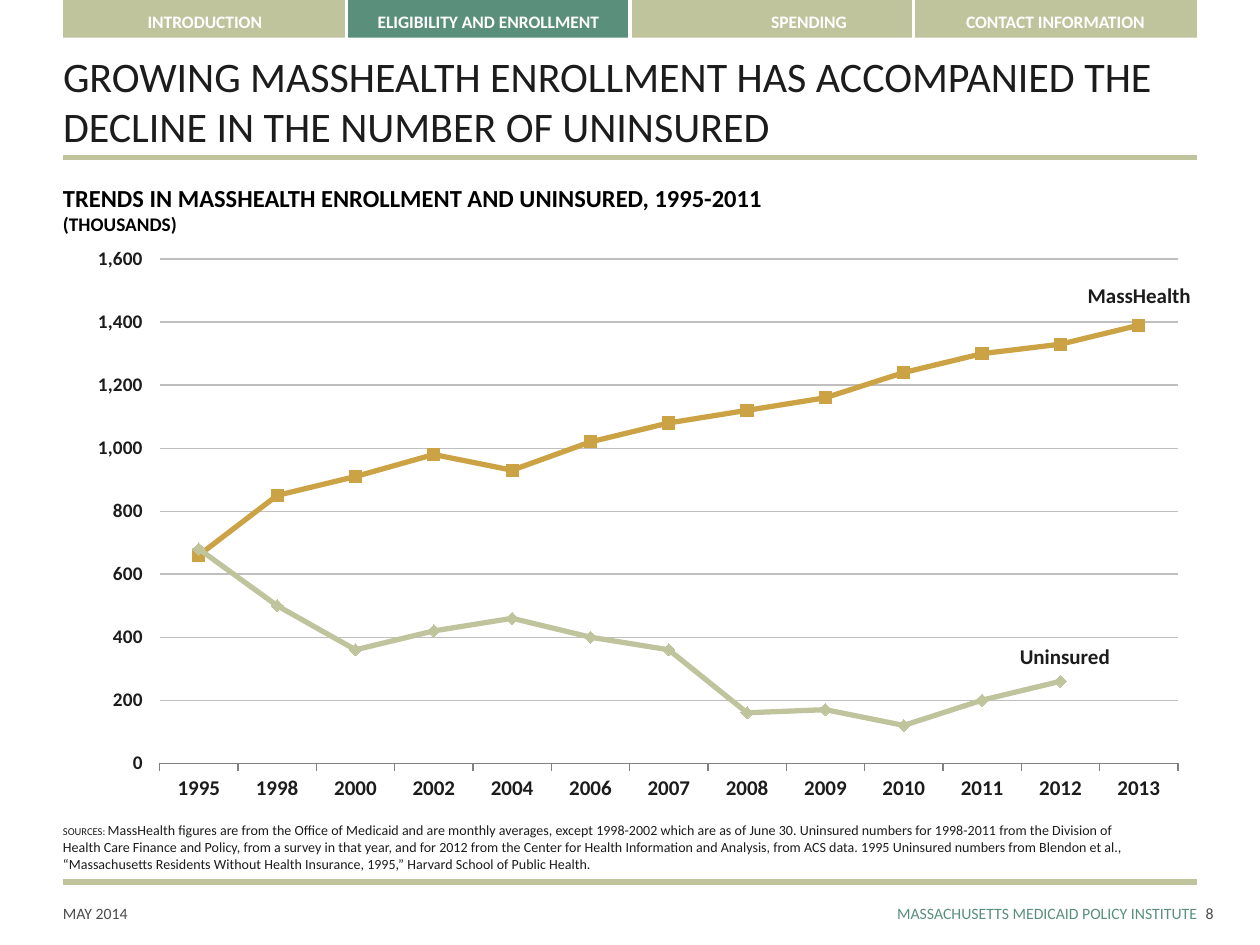
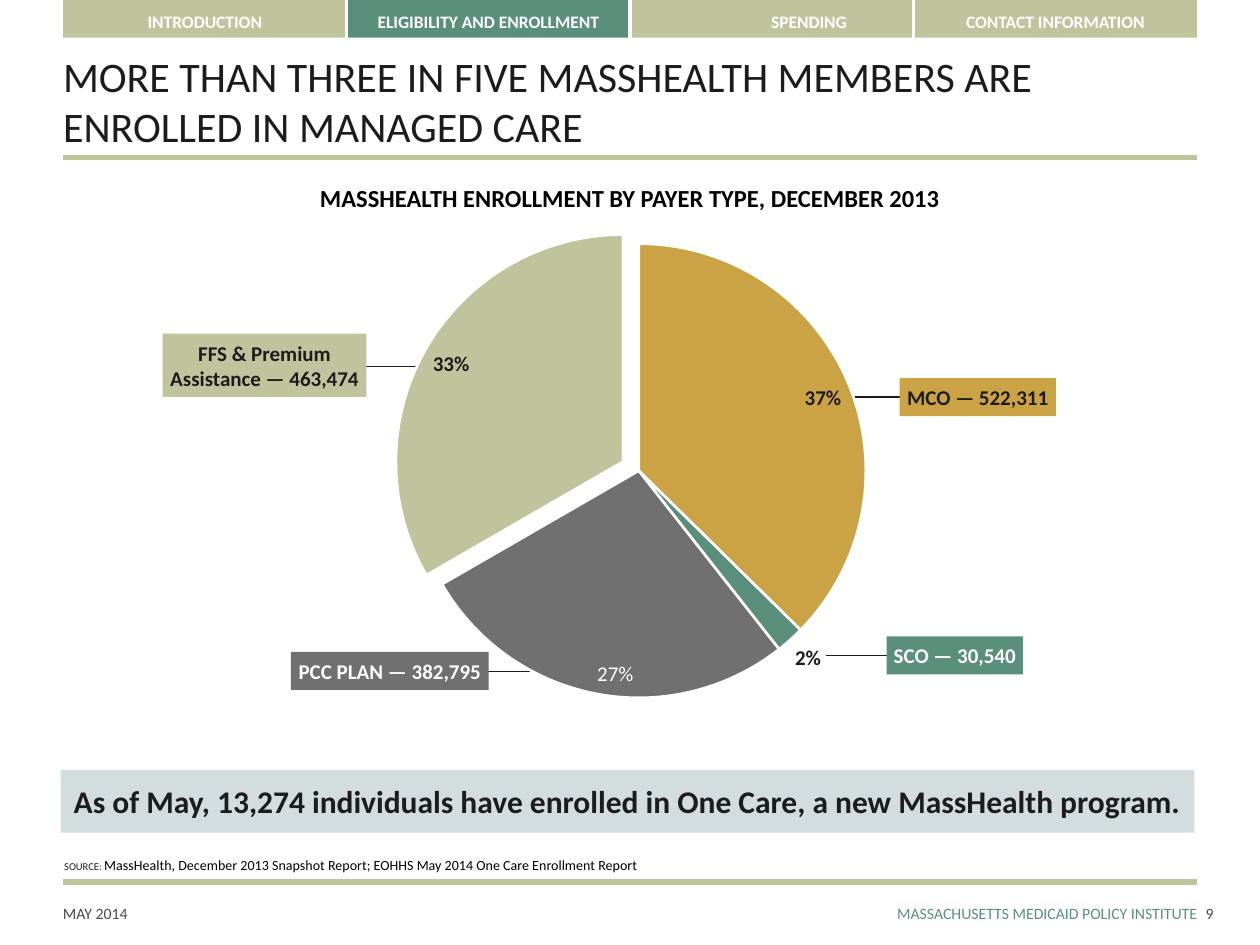
from lxml import etree
from pptx import Presentation
from pptx.chart.data import CategoryChartData
from pptx.dml.color import RGBColor
from pptx.enum.chart import (XL_CHART_TYPE, XL_LABEL_POSITION, XL_MARKER_STYLE,
                             XL_TICK_MARK)
from pptx.enum.shapes import MSO_CONNECTOR, MSO_SHAPE
from pptx.enum.text import MSO_ANCHOR, MSO_AUTO_SIZE, PP_ALIGN
from pptx.oxml.ns import qn
from pptx.util import Pt

LEFT, CENTER, RIGHT = PP_ALIGN.LEFT, PP_ALIGN.CENTER, PP_ALIGN.RIGHT
TOP, MIDDLE, BOTTOM = MSO_ANCHOR.TOP, MSO_ANCHOR.MIDDLE, MSO_ANCHOR.BOTTOM
INSIDE_END, OUTSIDE_END = XL_LABEL_POSITION.INSIDE_END, XL_LABEL_POSITION.OUTSIDE_END
TICK_OUTSIDE = XL_TICK_MARK.OUTSIDE
SQUARE, DIAMOND = XL_MARKER_STYLE.SQUARE, XL_MARKER_STYLE.DIAMOND

FONT = "Calibri"
COLORS = {"ink": "1C1C1C", "black": "000000", "white": "FFFFFF", "footer": "4B4B4B",
          "sage": "BFC49D", "green": "5A8F7C", "gold": "CBA344", "gray": "707070",
          "mist": "D4DDDD", "grid": "BFBFBF", "axis": "808080"}
MARGIN, CONTENT_WIDTH = 36, 648

# Section name and left inset of its label
SECTIONS = [("INTRODUCTION", 3.6), ("ELIGIBILITY AND ENROLLMENT", 3.6),
            ("SPENDING", 46), ("CONTACT INFORMATION", 0)]
CURRENT_SECTION = "ELIGIBILITY AND ENROLLMENT"
ISSUE_DATE = "MAY 2014"
PUBLISHER = "MASSACHUSETTS MEDICAID POLICY INSTITUTE"

TRENDS = {
    "number": 8,
    "title": "GROWING MASSHEALTH ENROLLMENT HAS ACCOMPANIED THE DECLINE IN THE NUMBER OF UNINSURED",
    "heading": [[("TRENDS IN MASSHEALTH ENROLLMENT AND UNINSURED, 1995-2011", {})],
                [("(THOUSANDS)", {"size": 11})]],
    "source": ("SOURCES: ",
               "MassHealth figures are from the Office of Medicaid and are monthly averages, "
               "except 1998-2002 which are as of June 30. Uninsured numbers for 1998-2011 from "
               "the Division of Health Care Finance and Policy, from a survey in that year, and "
               "for 2012 from the Center for Health Information and Analysis, from ACS data. "
               "1995 Uninsured numbers from Blendon et al., “Massachusetts Residents Without "
               "Health Insurance, 1995,” Harvard School of Public Health."),
    "years": ["1995", "1998", "2000", "2002", "2004", "2006", "2007", "2008", "2009",
              "2010", "2011", "2012", "2013"],
    # Name, color, marker, values, place of the name
    "series": [
        ("MassHealth", "gold", SQUARE,
         [660, 850, 910, 980, 930, 1020, 1080, 1120, 1160, 1240, 1300, 1330, 1390],
         (614, 157.7, 74, 21.6)),
        ("Uninsured", "sage", DIAMOND,
         [680, 500, 360, 420, 460, 400, 360, 160, 170, 120, 200, 260, None],
         (575, 364.3, 67, 21.6)),
    ],
}

PAYERS = {
    "number": 9,
    "title": "MORE THAN THREE IN FIVE MASSHEALTH MEMBERS ARE ENROLLED IN MANAGED CARE",
    "heading": "MASSHEALTH ENROLLMENT BY PAYER TYPE, DECEMBER 2013",
    "source": ("SOURCE: ", "MassHealth, December 2013 Snapshot Report; "
                           "EOHHS May 2014 One Care Enrollment Report"),
    "takeaway": "As of May, 13,274 individuals have enrolled in One Care, "
                "a new MassHealth program.",
    # Callout lines, share, fill, text color, callout box, leader (start, end, height)
    "shares": [
        (["MCO — 522,311"], 0.37, "gold", "ink",
         (514.1, 216, 89.3, 21.8), (480, 523, 226.8)),
        (["SCO — 30,540"], 0.02, "green", "white",
         (506.6, 363.6, 78, 21.8), (472, 514, 374.4)),
        (["PCC PLAN — 382,795"], 0.27, "gray", "white",
         (166.3, 372.5, 113, 21.8), (274, 316, 383.6)),
        (["FFS & Premium", "Assistance — 463,474"], 0.33, "sage", "ink",
         (93, 190.6, 116.4, 36.2), (204, 246, 209.4)),
    ],
}


def rgb(name):
    return RGBColor.from_string(COLORS[name])


def style_font(font, size, color="ink", bold=False):
    font.name, font.size, font.bold = FONT, Pt(size), bold
    font.color.rgb = rgb(color)


def write(shape, content, size=12, color="ink", bold=False, align=LEFT, anchor=TOP,
          insets=(0, 0, 0, 0), wrap=True):
    """Fill a shape with a string, or with paragraphs made of (text, format) runs."""
    frame = shape.text_frame
    frame.auto_size, frame.word_wrap = MSO_AUTO_SIZE.NONE, wrap
    frame.vertical_anchor = anchor
    (frame.margin_left, frame.margin_top,
     frame.margin_right, frame.margin_bottom) = map(Pt, insets)
    paragraphs = [[(content, {})]] if isinstance(content, str) else content
    for index, runs in enumerate(paragraphs):
        paragraph = frame.add_paragraph() if index else frame.paragraphs[0]
        paragraph.alignment = align
        for words, changes in runs:
            run = paragraph.add_run()
            run.text = words
            style_font(run.font, **{"size": size, "color": color, "bold": bold, **changes})


def add_text(slide, box, content, **style):
    write(slide.shapes.add_textbox(*map(Pt, box)), content, **style)


def add_box(slide, box, fill, content, **style):
    shape = slide.shapes.add_shape(MSO_SHAPE.RECTANGLE, *map(Pt, box))
    shape.shadow.inherit = False
    shape.fill.solid()
    shape.fill.fore_color.rgb = rgb(fill)
    shape.line.fill.background()
    write(shape, content, **style)


def add_line(slide, x1, y1, x2, y2, color, width):
    line = slide.shapes.add_connector(MSO_CONNECTOR.STRAIGHT, *map(Pt, (x1, y1, x2, y2)))
    line.line.color.rgb = rgb(color)
    line.line.width = Pt(width)
    etree.SubElement(line._element.spPr, qn("a:effectLst"))


def add_page(deck, page, source_box, source_color):
    """Add a slide with section tabs, title, rules, source and footer."""
    slide = deck.slides.add_slide(deck.slide_layouts[5])
    tab_width = CONTENT_WIDTH / len(SECTIONS)
    edges = [MARGIN + i * tab_width for i in range(len(SECTIONS))]
    for x, (section, inset) in zip(edges, SECTIONS):
        add_box(slide, (x, 0, tab_width, 21.6),
                "green" if section == CURRENT_SECTION else "sage", section,
                size=10, color="white", bold=True, align=CENTER, anchor=BOTTOM,
                insets=(inset, 0, min(inset, 3.6), 3.6))
    for x in edges[1:]:
        add_line(slide, x, 0, x, 21.6, "white", 2)
    for y in (90, 504):
        add_line(slide, MARGIN, y, MARGIN + CONTENT_WIDTH, y, "sage", 3)

    title = slide.shapes.title
    title.left, title.top, title.width, title.height = map(
        Pt, (MARGIN, 27.4, CONTENT_WIDTH, 62.6))
    write(title, page["title"], size=24, anchor=BOTTOM, insets=(0, 3.6, 0, 3.6))

    add_text(slide, (MARGIN, 516.2, 130, 23), ISSUE_DATE, size=9, color="footer")
    add_text(slide, (374, 516.2, 310, 23), PUBLISHER, size=9, color="green", align=RIGHT)
    add_text(slide, (689, 516.2, 31, 23), str(page["number"]), size=9, color="footer")
    label, source = page["source"]
    add_text(slide, source_box, [[(label, {"size": 6}), (source, {"color": source_color})]],
             size=8, anchor=BOTTOM, insets=(0, 3.6, 0, 3.6))
    return slide


def add_chart(slide, kind, box, data, plot_area):
    """Add a bare chart whose inner plot area is given as fractions x, y, w, h."""
    chart = slide.shapes.add_chart(kind, *map(Pt, box), data).chart
    chart.has_title = chart.has_legend = False
    style_font(chart.font, 10)
    area = chart._chartSpace.find(".//" + qn("c:plotArea"))
    for layout in area.findall(qn("c:layout")):
        area.remove(layout)
    layout = etree.Element(qn("c:layout"))
    manual = etree.SubElement(layout, qn("c:manualLayout"))
    settings = [("layoutTarget", "inner"), ("xMode", "edge"), ("yMode", "edge"),
                *zip("xywh", plot_area)]
    for tag, value in settings:
        etree.SubElement(manual, qn("c:" + tag)).set("val", str(value))
    area.insert(0, layout)
    return chart


def add_trend_chart(slide):
    data = CategoryChartData(number_format="#,##0")
    data.categories = TRENDS["years"]
    for name, _, _, values, _ in TRENDS["series"]:
        data.add_series(name, values)
    chart = add_chart(slide, XL_CHART_TYPE.LINE_MARKERS, (34.6, 107.3, 650.9, 381.6),
                      data, (0.087, 0.107, 0.894, 0.755))
    for series, (_, color, marker, _, _) in zip(chart.plots[0].series, TRENDS["series"]):
        series.smooth = False
        series.format.line.color.rgb = rgb(color)
        series.format.line.width = Pt(3)
        series.marker.style, series.marker.size = marker, 7
        series.marker.format.fill.solid()
        series.marker.format.fill.fore_color.rgb = rgb(color)
        series.marker.format.line.color.rgb = rgb(color)

    years, counts = chart.category_axis, chart.value_axis
    style_font(years.tick_labels.font, 12, bold=True)
    years.major_tick_mark = counts.major_tick_mark = TICK_OUTSIDE
    years.has_major_gridlines = False
    years.format.line.color.rgb = rgb("axis")
    style_font(counts.tick_labels.font, 11, bold=True)
    counts.tick_labels.number_format = r"#,##0_);[Red]\(#,##0\)"
    counts.tick_labels.number_format_is_linked = False
    counts.minimum_scale, counts.maximum_scale, counts.major_unit = 0, 1600, 200
    counts.format.line.fill.background()
    counts.major_gridlines.format.line.color.rgb = rgb("grid")
    counts.major_gridlines.format.line.width = Pt(0.75)
    axis = counts._element
    if axis.find(qn("c:crossBetween")) is None:
        between = etree.Element(qn("c:crossBetween"))
        between.set("val", "between")
        axis.find(qn("c:crosses")).addnext(between)


def add_share_chart(slide):
    data = CategoryChartData(number_format="0%")
    data.categories = [" ".join(lines) for lines, *_ in PAYERS["shares"]]
    data.add_series("Share of members", [share for _, share, *_ in PAYERS["shares"]])
    chart = add_chart(slide, XL_CHART_TYPE.PIE, (121, 120.2, 478, 306), data,
                      (0.239, 0.062, 0.543, 0.849))
    plot = chart.plots[0]
    plot.vary_by_categories = True
    series = plot.series[0]
    for index, (_, _, fill, *_) in enumerate(PAYERS["shares"]):
        wedge = series.points[index].format
        wedge.fill.solid()
        wedge.fill.fore_color.rgb = rgb(fill)
        wedge.line.color.rgb = rgb("white")
        wedge.line.width = Pt(1.5)

    fee_for_service = series._element.findall(qn("c:dPt"))[3]
    explosion = etree.Element(qn("c:explosion"))
    explosion.set("val", "8")
    fee_for_service.find(qn("c:spPr")).addprevious(explosion)

    labels = series.data_labels
    labels.show_value = True
    labels.number_format, labels.number_format_is_linked = "0%", False
    labels.position = INSIDE_END
    style_font(labels.font, 12, bold=True)
    sco_label = series.points[1].data_label
    style_font(sco_label.font, 12, bold=True)
    sco_label.position = OUTSIDE_END
    pcc_label = series.points[2].data_label
    run = pcc_label.text_frame.paragraphs[0].add_run()
    run.text = "27%"
    style_font(run.font, 12, "white")
    pcc_label.position = INSIDE_END


def build_trends(deck):
    slide = add_page(deck, TRENDS, (MARGIN, 465.8, 621.4, 36), "ink")
    add_trend_chart(slide)
    add_text(slide, (MARGIN, 100.8, 468, 36), TRENDS["heading"], size=14, color="black",
             bold=True, insets=(0, 3.6, 0, 3.6))
    for name, _, _, _, box in TRENDS["series"]:
        add_text(slide, box, name, bold=True, align=CENTER, anchor=MIDDLE, wrap=False)


def build_payers(deck):
    slide = add_page(deck, PAYERS, (36.7, 485.3, 479.5, 17.3), "black")
    add_text(slide, (MARGIN, 100.8, CONTENT_WIDTH, 24), PAYERS["heading"], size=14,
             color="black", bold=True, align=CENTER, insets=(0, 3.6, 0, 3.6))
    for *_, (start, end, y) in PAYERS["shares"]:
        add_line(slide, start, y, end, y, "ink", 0.75)
    add_share_chart(slide)
    for lines, _, fill, color, box, _ in PAYERS["shares"]:
        add_box(slide, box, fill, [[(line, {})] for line in lines], color=color, bold=True,
                align=CENTER, anchor=MIDDLE, insets=(3.6,) * 4, wrap=False)
    add_box(slide, (34.6, 439.9, CONTENT_WIDTH, 36), "mist", PAYERS["takeaway"], size=18,
            bold=True, align=CENTER, anchor=MIDDLE, insets=(3.6,) * 4)


def main():
    deck = Presentation()
    deck.slide_width, deck.slide_height = Pt(720), Pt(540)
    build_trends(deck)
    build_payers(deck)
    deck.save("out.pptx")


if __name__ == "__main__":
    main()
